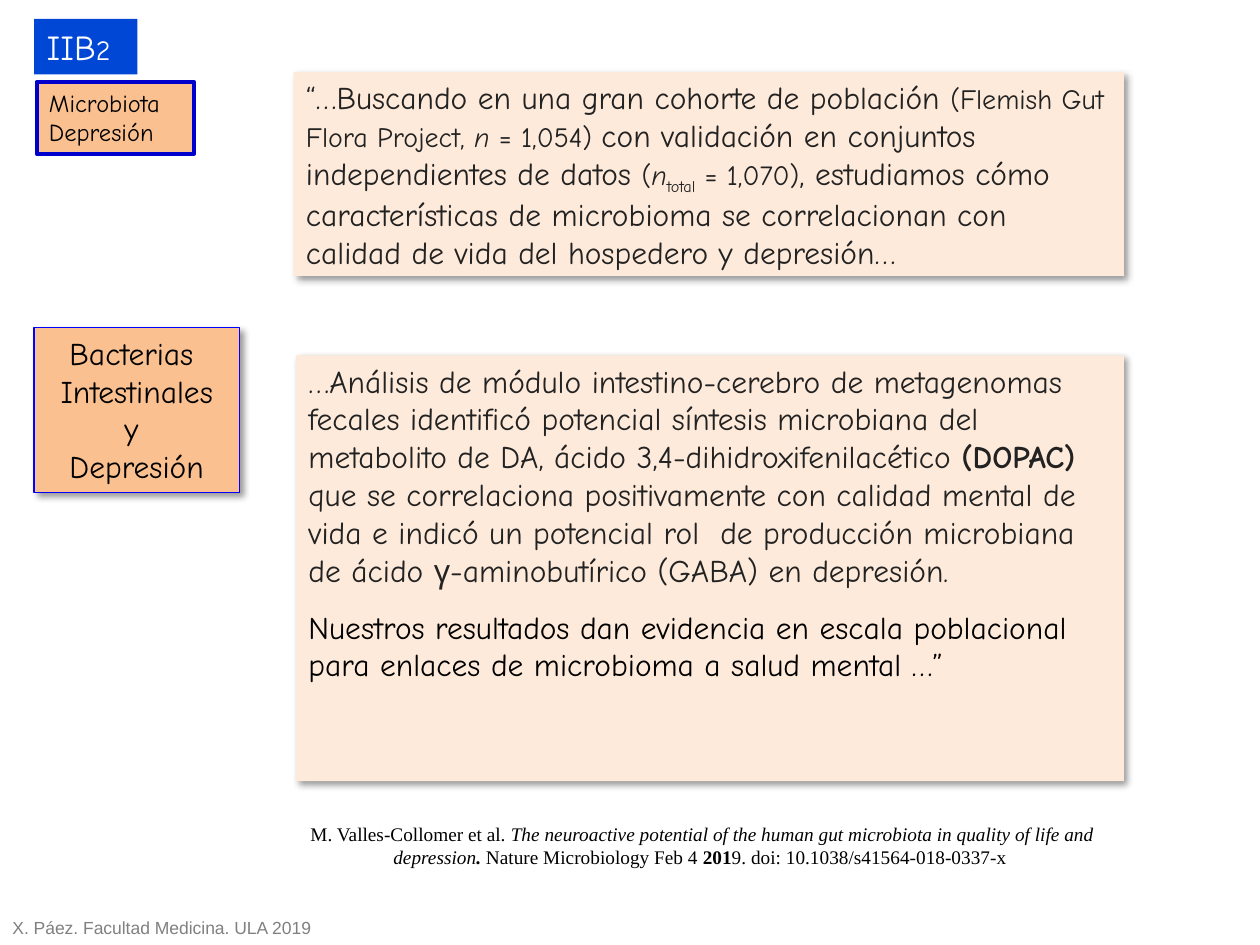
import dataclasses

import lxml.etree
import pptx
import pptx.dml.color
import pptx.enum.shapes
import pptx.enum.text
import pptx.oxml.ns
import pptx.util

Inches = pptx.util.Inches
Pt = pptx.util.Pt
LEFT = pptx.enum.text.PP_ALIGN.LEFT
CENTER = pptx.enum.text.PP_ALIGN.CENTER


@dataclasses.dataclass(frozen=True)
class Theme:
    hand_font: str = "Comic Neue"
    serif_font: str = "Times New Roman"
    plain_font: str = "Arial"
    cream: str = "FDEADA"
    peach: str = "FAC090"
    title_blue: str = "0047D6"
    frame_blue: str = "0000CC"
    thin_blue: str = "0000FF"
    charcoal: str = "222222"
    black: str = "000000"
    white: str = "FFFFFF"
    gray: str = "808080"
    title_size: int = 20
    body_size: int = 18
    detail_size: int = 16
    topic_size: int = 14
    citation_size: int = 11
    footer_size: int = 10


@dataclasses.dataclass(frozen=True)
class Run:
    text: str
    size: int
    color: str = Theme.black
    font: str = Theme.hand_font
    bold: bool = False
    italic: bool = False
    subscript: bool = False


def rgb(value):
    return pptx.dml.color.RGBColor.from_string(value)


class SlideBuilder:
    """Holds the theme and the slide that elements are added to."""

    def __init__(self, slide, theme):
        self.slide = slide
        self.theme = theme

    def fill_text(self, shape, paragraphs, align=LEFT, wrap=True, gap=0):
        """Fill a shape with paragraphs, each a list of runs, gap points apart."""
        frame = shape.text_frame
        frame.word_wrap = wrap
        frame.auto_size = pptx.enum.text.MSO_AUTO_SIZE.NONE
        frame.vertical_anchor = pptx.enum.text.MSO_ANCHOR.TOP
        for index, runs in enumerate(paragraphs):
            paragraph = frame.add_paragraph() if index else frame.paragraphs[0]
            paragraph.alignment = align
            paragraph.space_before = Pt(gap if index else 0)
            for item in runs:
                run = paragraph.add_run()
                run.text = item.text
                run.font.name = item.font
                run.font.size = Pt(item.size)
                run.font.bold = item.bold
                run.font.italic = item.italic
                run.font.color.rgb = rgb(item.color)
                if item.subscript:
                    run._r.get_or_add_rPr().set("baseline", "-25000")

    def title(self, bounds, runs):
        shape = self.slide.shapes.title
        shape.left, shape.top, shape.width, shape.height = map(Inches, bounds)
        shape.fill.solid()
        shape.fill.fore_color.rgb = rgb(self.theme.title_blue)
        self.fill_text(shape, [runs], wrap=False)

    def text(self, bounds, runs, **layout):
        shape = self.slide.shapes.add_textbox(*map(Inches, bounds))
        self.fill_text(shape, [runs], **layout)

    def box(self, bounds, fill, paragraphs, line=None, line_width=0,
            shadow=False, **layout):
        shape = self.slide.shapes.add_shape(
            pptx.enum.shapes.MSO_SHAPE.RECTANGLE, *map(Inches, bounds))
        shape.fill.solid()
        shape.fill.fore_color.rgb = rgb(fill)
        if line:
            shape.line.color.rgb = rgb(line)
            shape.line.width = Pt(line_width)
        else:
            shape.line.fill.background()
        shape.shadow.inherit = False
        if shadow:
            self.cast_shadow(shape)
        self.fill_text(shape, paragraphs, **layout)

    def cast_shadow(self, shape):
        qn = pptx.oxml.ns.qn
        effects = shape._element.spPr.find(qn("a:effectLst"))
        outer = lxml.etree.SubElement(
            effects, qn("a:outerShdw"), blurRad=str(Pt(4)), dist=str(Pt(3)),
            dir=str(45 * 60000), algn="tl", rotWithShape="0")
        color = lxml.etree.SubElement(outer, qn("a:srgbClr"), val=self.theme.black)
        lxml.etree.SubElement(color, qn("a:alpha"), val="40000")


def main():
    theme = Theme()
    presentation = pptx.Presentation()
    presentation.slide_width = Inches(10)
    presentation.slide_height = Inches(7.5)
    title_only = presentation.slide_layouts[5]
    builder = SlideBuilder(presentation.slides.add_slide(title_only), theme)

    def body(text, **style):
        return Run(text, theme.body_size, theme.charcoal, **style)

    def detail(text, **style):
        return Run(text, theme.detail_size, theme.charcoal, **style)

    def citation(text, **style):
        return Run(text, theme.citation_size, font=theme.serif_font, **style)

    builder.title((0.27, 0.15, 0.82, 0.44), [
        Run("IIB", theme.title_size, theme.white),
        Run("2", theme.detail_size, theme.white),
    ])

    findings = [
        body("…Análisis de módulo intestino-cerebro de metagenomas fecales "
             "identificó potencial síntesis microbiana del metabolito de DA, "
             "ácido 3,4-dihidroxifenilacético "),
        body("(DOPAC) ", bold=True),
        body("que se correlaciona positivamente con calidad mental de vida e "
             "indicó un potencial rol  de producción microbiana de ácido "
             "γ-aminobutírico (GABA) en depresión."),
    ]
    conclusion = [Run("Nuestros resultados dan evidencia en escala poblacional "
                      "para enlaces de microbioma a salud mental …”",
                      theme.body_size)]
    builder.box((2.35, 2.82, 6.57, 3.38), theme.cream, [findings, conclusion],
                shadow=True, gap=11)

    cohort = [
        body("“…Buscando en una gran cohorte de población "),
        detail("(Flemish Gut Flora Project, "),
        detail("n", italic=True),
        detail(" = 1,054) "),
        body("con validación en conjuntos independientes de datos "),
        detail("("),
        detail("n", italic=True),
        detail("total", subscript=True),
        detail(" = 1,070)"),
        body(", estudiamos cómo características de microbioma se correlacionan "
             "con calidad de vida del hospedero y depresión…"),
    ]
    builder.box((2.33, 0.57, 6.59, 1.62), theme.cream, [cohort], shadow=True)

    builder.text((2.19, 6.48, 6.73, 0.47), [
        citation(" M. Valles-Collomer et al. "),
        citation("The neuroactive potential of the human gut microbiota in "
                 "quality of life and depression", italic=True),
        citation(". ", bold=True, italic=True),
        citation("Nature Microbiology Feb 4 "),
        citation("201", bold=True),
        citation("9. doi: 10.1038/s41564-018-0337-x"),
    ], align=CENTER)

    topic = [[Run(text, theme.topic_size)] for text in ("Microbiota", "Depresión")]
    builder.box((0.29, 0.65, 1.25, 0.57), theme.peach, topic,
                line=theme.frame_blue, line_width=2.25, wrap=False)

    builder.text((0, 7.23, 2.59, 0.27), [
        Run("X. Páez. Facultad Medicina. ULA 2019", theme.footer_size,
            theme.gray, theme.plain_font),
    ], wrap=False)

    subject = [[Run(text, theme.body_size)]
               for text in ("Bacterias ", "Intestinales", "y ", "Depresión")]
    builder.box((0.27, 2.6, 1.63, 1.31), theme.peach, subject,
                line=theme.thin_blue, line_width=0.75, shadow=True,
                align=CENTER, wrap=False)

    presentation.save("out.pptx")


if __name__ == "__main__":
    main()
